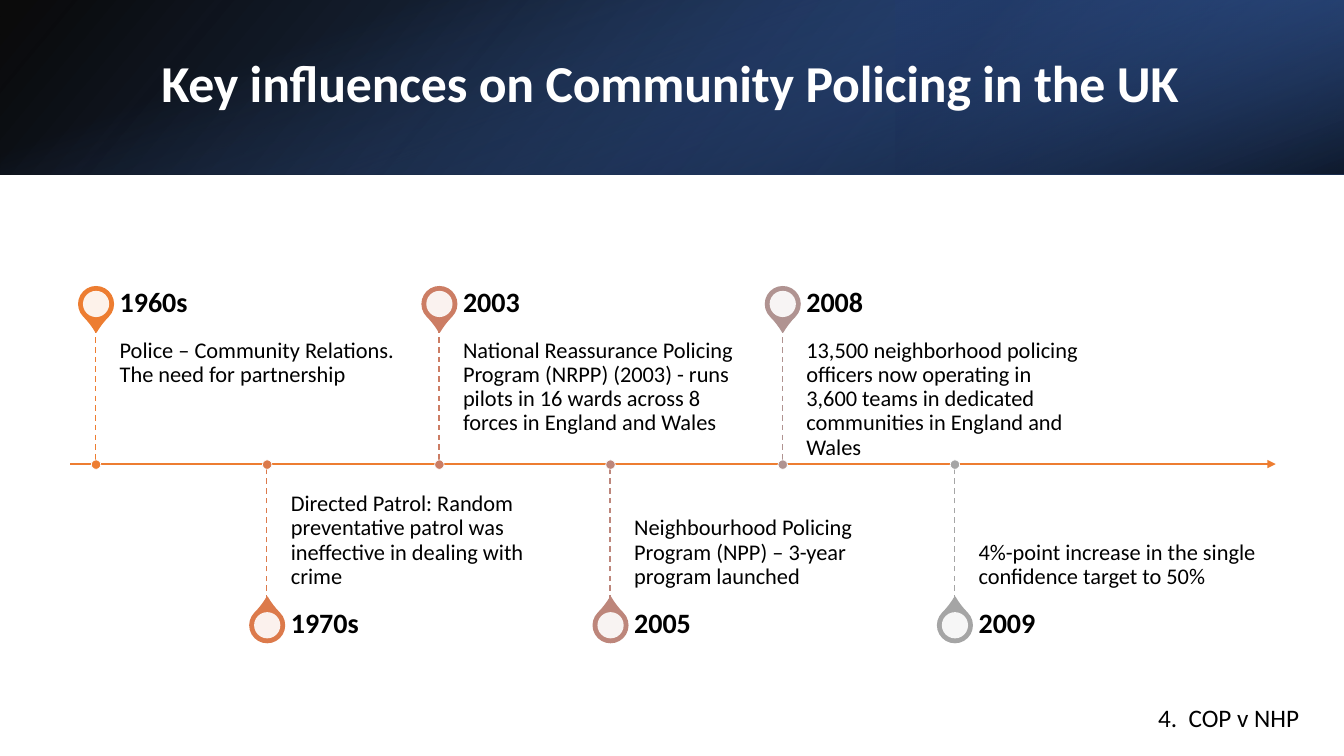
from lxml import etree
from pptx import Presentation
from pptx.dml.color import RGBColor
from pptx.enum.dml import MSO_LINE
from pptx.enum.shapes import MSO_CONNECTOR, MSO_SHAPE
from pptx.enum.text import MSO_ANCHOR, MSO_AUTO_SIZE, PP_ALIGN
from pptx.oxml.ns import qn
from pptx.util import Pt

PX = 9525
RECT, OVAL, DROP = MSO_SHAPE.RECTANGLE, MSO_SHAPE.OVAL, MSO_SHAPE.TEAR
STRAIGHT, DASH = MSO_CONNECTOR.STRAIGHT, MSO_LINE.DASH
TOP, MID, LOW = MSO_ANCHOR.TOP, MSO_ANCHOR.MIDDLE, MSO_ANCHOR.BOTTOM
LEFT, FIXED = PP_ALIGN.LEFT, MSO_AUTO_SIZE.NONE

BLACK = RGBColor(0x00, 0x00, 0x00)
WHITE = RGBColor(0xFF, 0xFF, 0xFF)
NAVY = RGBColor(0x20, 0x38, 0x64)
DENIM = RGBColor(0x2F, 0x55, 0x97)
BLUE = RGBColor(0x44, 0x72, 0xC4)
ORANGE = RGBColor(0xED, 0x7D, 0x31)
RUST = RGBColor(0xDC, 0x7A, 0x4B)
CLAY = RGBColor(0xCC, 0x7D, 0x64)
ROSE = RGBColor(0xBD, 0x86, 0x7B)
MAUVE = RGBColor(0xB0, 0x93, 0x91)
GREY = RGBColor(0xA5, 0xA5, 0xA5)

FONT = "Calibri"
AXIS = 442
START = 91
SPAN = 818
STEM = 130
REACH = 153
WIDE = 273
LABEL = 46

EVENTS = [
    ("1960s", "Police – Community Relations. The need for partnership", ORANGE),
    ("1970s", "Directed Patrol: Random preventative patrol was ineffective "
     "in dealing with crime", RUST),
    ("2003", "National Reassurance Policing Program (NRPP) (2003) - runs "
     "pilots in 16 wards across 8 forces in England and Wales", CLAY),
    ("2005", "Neighbourhood Policing Program (NPP) – 3-year program launched", ROSE),
    ("2008", "13,500 neighborhood policing officers now operating in 3,600 "
     "teams in dedicated communities in England and Wales", MAUVE),
    ("2009", "4%-point increase in the single confidence target to 50%", GREY),
]


def scale(*sizes):
    return [size * PX for size in sizes]


def add_alpha(color, alpha):
    etree.SubElement(color, qn("a:alpha"), val=str(alpha * 1000))


def add_shape(slide, kind, box, fill=None, line=None, width=1):
    shape = slide.shapes.add_shape(kind, *scale(*box))
    shape.shadow.inherit = False
    if fill is not None:
        shape.fill.solid()
        shape.fill.fore_color.rgb = fill
    if line is None:
        shape.line.fill.background()
    else:
        shape.line.color.rgb = line
        shape.line.width = Pt(width)
    return shape


def add_blend(slide, box, stops, angle, turn=0, flip=False):
    shape = add_shape(slide, RECT, box)
    shape.rotation = turn
    frame = shape._element.spPr
    if flip:
        frame.find(qn("a:xfrm")).set("flipH", "1")
    grad = etree.Element(qn("a:gradFill"), rotWithShape="1")
    group = etree.SubElement(grad, qn("a:gsLst"))
    for place, color, alpha in stops:
        stop = etree.SubElement(group, qn("a:gs"), pos=str(place * 1000))
        add_alpha(etree.SubElement(stop, qn("a:srgbClr"), val=str(color)), alpha)
    etree.SubElement(grad, qn("a:lin"), ang=str(angle * 60000), scaled="0")
    frame.find(qn("a:prstGeom")).addnext(grad)


def add_line(slide, ends, color, width, dash=None, arrow=False):
    link = slide.shapes.add_connector(STRAIGHT, *scale(*ends))
    link.line.color.rgb = color
    link.line.width = Pt(width)
    if dash is not None:
        link.line.dash_style = dash
    if arrow:
        etree.SubElement(link.line._get_or_add_ln(), qn("a:tailEnd"), type="triangle")
    etree.SubElement(link._element.spPr, qn("a:effectLst"))


def set_text(shape, text, size, color=BLACK, bold=False, anchor=MID, space=0.9):
    frame = shape.text_frame
    frame.word_wrap = True
    frame.auto_size = FIXED
    frame.vertical_anchor = anchor
    frame.text = text
    para = frame.paragraphs[0]
    para.alignment = LEFT
    para.line_spacing = space
    font = para.font
    font.name, font.size, font.bold = FONT, Pt(size), bold
    font.color.rgb = color


def add_text(slide, box, text, size, pads=(10, 5, 10, 5), **look):
    shape = slide.shapes.add_textbox(*scale(*box))
    set_text(shape, text, size, **look)
    frame = shape.text_frame
    (frame.margin_left, frame.margin_top,
     frame.margin_right, frame.margin_bottom) = scale(*pads)


def add_disc(slide, x, y, size, fill, line=None, width=1):
    box = (x - size // 2, y - size // 2, size, size)
    return add_shape(slide, OVAL, box, fill, line, width)


def add_banner(slide):
    add_blend(slide, (0, 0, 1280, 166),
              [(0, BLACK, 96), (100, DENIM, 100)], 140, flip=True)
    add_blend(slide, (853, 0, 427, 166),
              [(19, NAVY, 68), (100, BLUE, 79)], 320, turn=180, flip=True)
    add_blend(slide, (557, -557, 166, 1280),
              [(23, BLUE, 0), (99, BLACK, 74)], 340, turn=90)


def add_title(slide, text):
    title = slide.shapes.title
    slide.shapes._spTree.append(title._element)
    title.left, title.top, title.width, title.height = scale(144, 36, 1054, 92)
    set_text(title, text, 37, WHITE, bold=True)
    title.text_frame.paragraphs[0].runs[0].font._element.set("spc", "-10")


def add_pin(slide, x, y, color, turn):
    drop = add_shape(slide, DROP, (x - 16, y - 16, 33, 33), color, color)
    drop.adjustments[0] = 1.15
    drop.rotation = turn
    disc = add_disc(slide, x, y, 25, WHITE)
    solid = disc._element.spPr.find(qn("a:solidFill"))
    add_alpha(solid[0], 90)


def add_event(slide, x, above, year, text, color):
    side = -1 if above else 1
    end = AXIS + side * STEM
    add_pin(slide, x, AXIS + side * REACH, color, 135 if above else 315)
    body = (x + 23, min(AXIS, end), WIDE, STEM)
    pads = (0, 11, 11, 16) if above else (0, 16, 0, 11)
    add_text(slide, body, text, 16, pads, anchor=TOP if above else LOW)
    head = (x + 23, end - LABEL if above else end, WIDE, LABEL)
    add_text(slide, head, year, 20, (0, 0, 13, 0), bold=True)
    add_line(slide, (x, end, x, AXIS), color, 1, DASH)
    add_disc(slide, x, AXIS, 9, color, WHITE, 0.5)


def main():
    deck = Presentation()
    deck.slide_width, deck.slide_height = scale(1280, 720)
    slide = deck.slides.add_slide(deck.slide_layouts[5])
    add_banner(slide)
    add_title(slide, "Key influences on Community Policing in the UK")
    add_line(slide, (67, AXIS, 1215, AXIS), ORANGE, 1.5, arrow=True)
    for i, event in enumerate(EVENTS):
        x = START + SPAN * i // (len(EVENTS) - 1)
        add_event(slide, x, i % 2 == 0, *event)
    add_text(slide, (1093, 664, 171, 39), "4.  COP v NHP", 18, anchor=TOP, space=1.0)
    deck.save("out.pptx")


if __name__ == "__main__":
    main()
